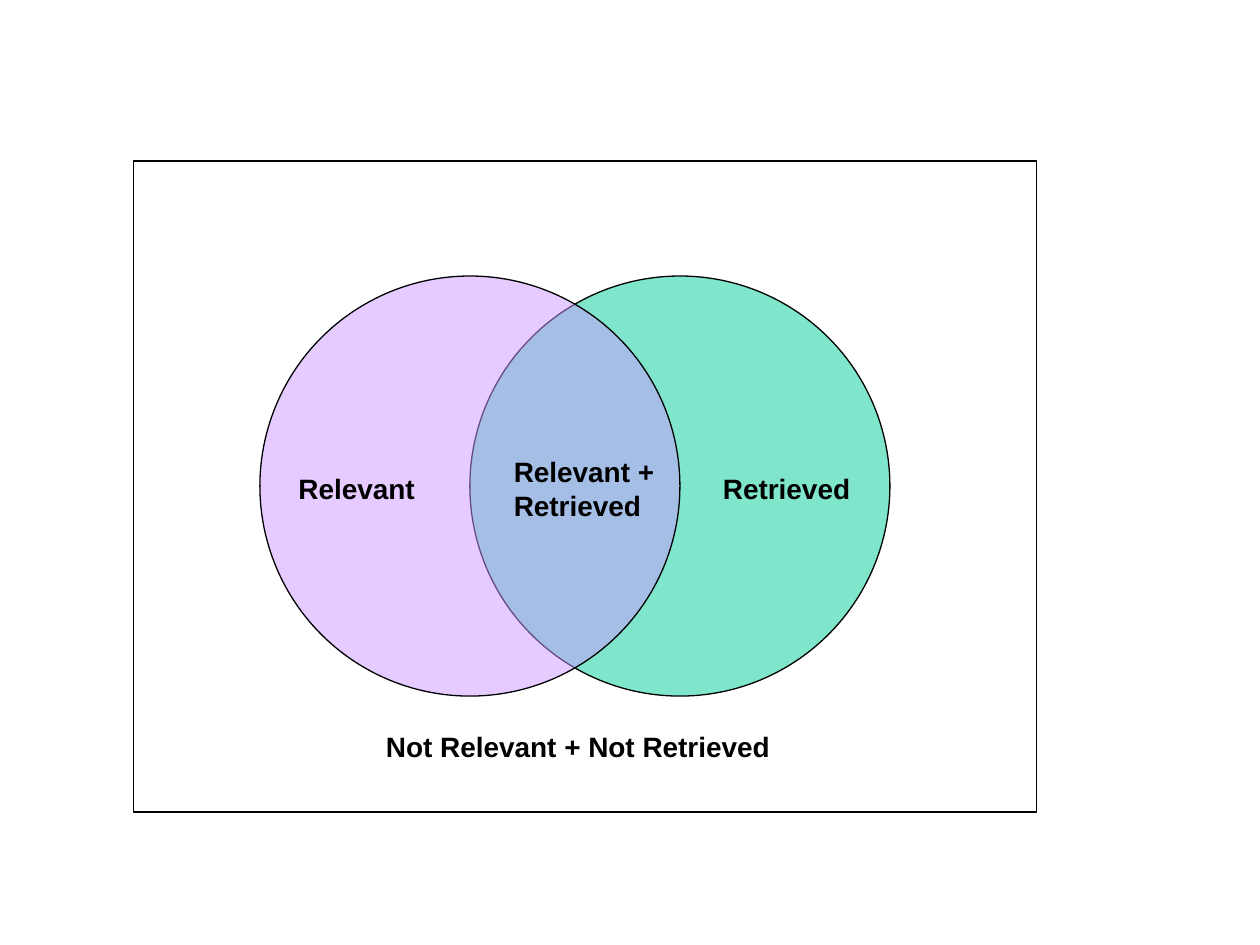
from lxml.etree import SubElement
from pptx import Presentation
from pptx.dml.color import RGBColor
from pptx.enum.shapes import MSO_SHAPE as Preset
from pptx.enum.text import MSO_AUTO_SIZE as AutoSize, MSO_VERTICAL_ANCHOR as Anchor
from pptx.oxml.ns import qn
from pptx.util import Pt

BLACK = RGBColor(0x00, 0x00, 0x00)
GREEN = RGBColor(0x00, 0xCC, 0x99)
LILAC = RGBColor(0xCC, 0x99, 0xFF)
LABEL_FONT = {"name": "Arial", "size": Pt(16), "bold": True}
LABEL_FRAME = {
    "word_wrap": False,
    "auto_size": AutoSize.SHAPE_TO_FIT_TEXT,
    "vertical_anchor": Anchor.TOP,
}


def apply_format(target, values):
    for name, value in values.items():
        setattr(target, name, value)


def add_outline(slide, preset, box, color=None):
    shape = slide.shapes.add_shape(preset, *map(Pt, box))
    shape.shadow.inherit = False
    apply_format(shape.line, {"width": Pt(0.75)})
    shape.line.color.rgb = BLACK
    if color is None:
        shape.fill.background()
        return
    shape.fill.solid()
    shape.fill.fore_color.rgb = color
    color_element = shape.fill._xPr.find(qn("a:solidFill"))[0]
    SubElement(color_element, qn("a:alpha"), val="50000")


def add_label(slide, lines, left, middle, width):
    height = 7.2 + 19.4 * len(lines)
    box = (left, middle - height / 2, width, height)
    text_frame = slide.shapes.add_textbox(*map(Pt, box)).text_frame
    apply_format(text_frame, LABEL_FRAME)
    text_frame.text = "\n".join(lines)
    for paragraph in text_frame.paragraphs:
        for run in paragraph.runs:
            apply_format(run.font, LABEL_FONT)
            run.font.color.rgb = BLACK


def add_circles(slide, left, top, diameter):
    middle = top + diameter / 2 + 1.5
    offset = diameter / 2
    add_outline(slide, Preset.OVAL, (left + offset, top, diameter, diameter), GREEN)
    add_label(slide, ["Retrieved"], left + 257.5, middle, 87)
    add_outline(slide, Preset.OVAL, (left, top, diameter, diameter), LILAC)
    add_label(slide, ["Relevant"], left + 15, middle, 81)
    add_label(slide, ["Relevant +", "Retrieved"], left + 138, middle, 95)


def add_universe(slide, left, top, width, height):
    add_outline(slide, Preset.RECTANGLE, (left, top, width, height))
    add_label(slide, ["Not Relevant + Not Retrieved"], left + 137.25, top + height - 37.5, 235)


def main():
    presentation = Presentation()
    presentation.slide_width = Pt(720)
    presentation.slide_height = Pt(540)
    slide = presentation.slides.add_slide(presentation.slide_layouts[6])
    add_circles(slide, 148.5, 157.75, 240)
    add_universe(slide, 76.25, 92, 516, 372)
    presentation.save("out.pptx")


if __name__ == "__main__":
    main()
